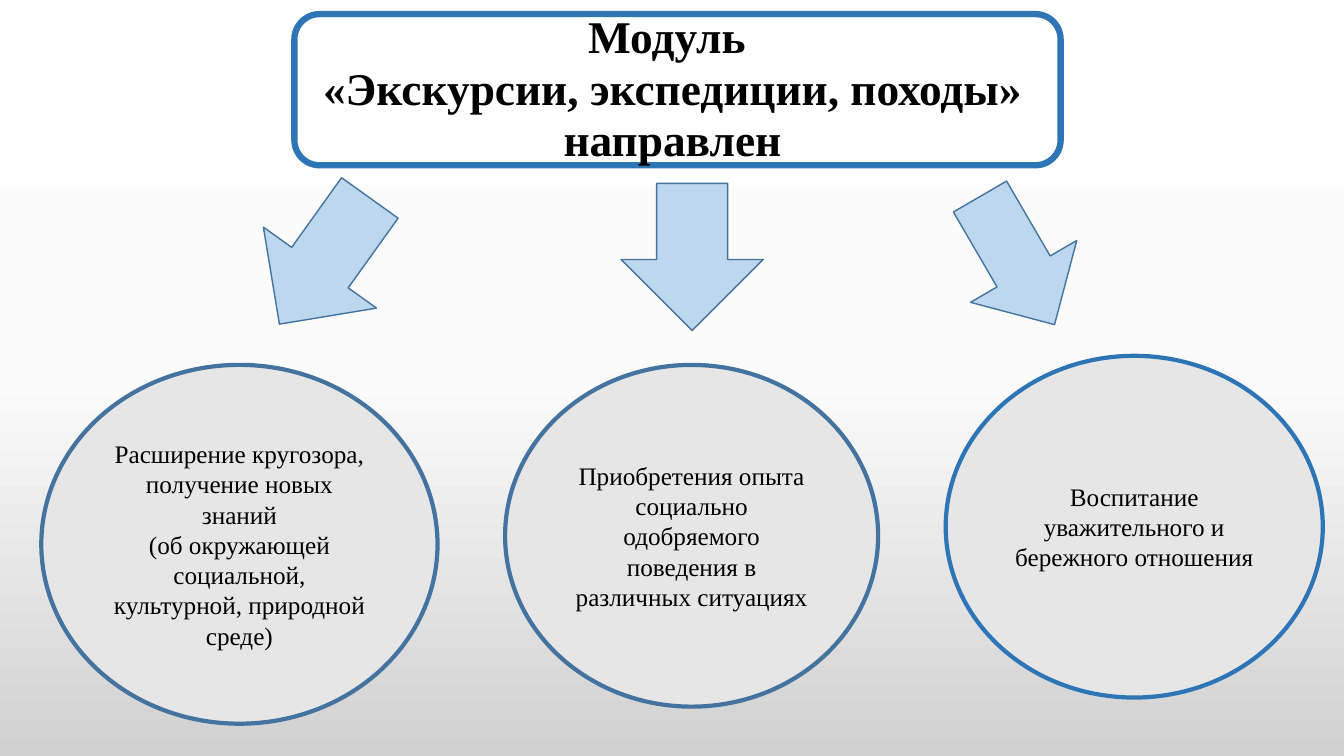
from pptx import Presentation
from pptx.dml.color import RGBColor
from pptx.enum import shapes, text
from pptx.util import Inches, Pt

FONT = "Times New Roman"
BLUE, STEEL = "2E75B6", "43739E"
TITLE = "Модуль \v«Экскурсии, экспедиции, походы»\vнаправлен"
ARROWS = [
    ((2.53, 1.82, 1.38, 1.54), 35.6),
    ((6.16, 1.82, 1.41, 1.46), 0),
    ((9.48, 1.85, 1.22, 1.47), 329.8),
]
GOALS = [
    ((0.41, 3.62, 3.93, 3.56), STEEL,
     ["Расширение кругозора, получение новых знаний",
      "(об окружающей социальной, культурной, природной среде)"]),
    ((5.01, 3.62, 3.7, 3.39), STEEL,
     ["Приобретения опыта социально одобряемого поведения в различных ситуациях"]),
    ((9.38, 3.53, 3.74, 3.39), BLUE,
     ["Воспитание уважительного и бережного отношения"]),
]


def color(value):
    return RGBColor.from_string(value)


def set_attributes(target, values):
    for name, value in values.items():
        setattr(target, name, value)


def paint_background(page):
    fill = page.background.fill
    fill.gradient()
    fill.gradient_angle = 270
    stops = fill.gradient_stops
    for stop, position, value in zip(stops, (0, 1), ("FBFBFB", "D1D1D1")):
        stop.position = position
        stop.color.rgb = color(value)
    add_middle_stop(fill)


def add_middle_stop(fill):
    first = fill.gradient_stops[0]
    stop_list = first._gs.getparent()
    middle = deepcopy(first._gs)
    stop_list.insert(1, middle)
    first.color.rgb = color("FFFFFF")
    fill.gradient_stops[1].position = 0.5


def add_figure(page, kind, box, fill, line, width):
    figure = page.shapes.add_shape(kind, *map(Inches, box))
    figure.shadow.inherit = False
    figure.fill.solid()
    figure.fill.fore_color.rgb = color(fill)
    figure.line.color.rgb = color(line)
    figure.line.width = Pt(width)
    return figure


def write(frame, lines, font, spacing=1.0):
    set_attributes(frame, {"word_wrap": True, "vertical_anchor": text.MSO_ANCHOR.MIDDLE})
    frame.text = "\n".join(lines)
    for para in frame.paragraphs:
        set_attributes(para, {"alignment": text.PP_ALIGN.CENTER, "line_spacing": spacing})
        for span in para.runs:
            set_attributes(span.font, {"name": FONT, **font})
            span.font.color.rgb = color("000000")


def add_heading(page, box):
    left, top, width, height = box
    add_figure(page, shapes.MSO_SHAPE.ROUNDED_RECTANGLE, box, "FFFFFF", BLUE, 4.5)
    label = page.shapes.add_textbox(*map(Inches, (left - 2, top, width + 3.9, height)))
    write(label.text_frame, [TITLE], {"size": Pt(32.4), "bold": True}, 0.94)


def add_arrow(page, box, rotation):
    arrow = add_figure(page, shapes.MSO_SHAPE.DOWN_ARROW, box, "BDD7EE", STEEL, 1)
    arrow.rotation = rotation


def add_goal(page, box, line, lines):
    goal = add_figure(page, shapes.MSO_SHAPE.OVAL, box, "E7E6E6", line, 3)
    write(goal.text_frame, lines, {"size": Pt(18)})


def main():
    deck = Presentation()
    set_attributes(deck, {"slide_width": Inches(13.33), "slide_height": Inches(7.5)})
    page = deck.slides.add_slide(deck.slide_layouts[6])
    paint_background(page)
    add_heading(page, (2.92, 0.14, 7.6, 1.5))
    for box, rotation in ARROWS:
        add_arrow(page, box, rotation)
    for box, line, lines in GOALS:
        add_goal(page, box, line, lines)
    deck.save("out.pptx")


from copy import deepcopy

if __name__ == "__main__":
    main()
